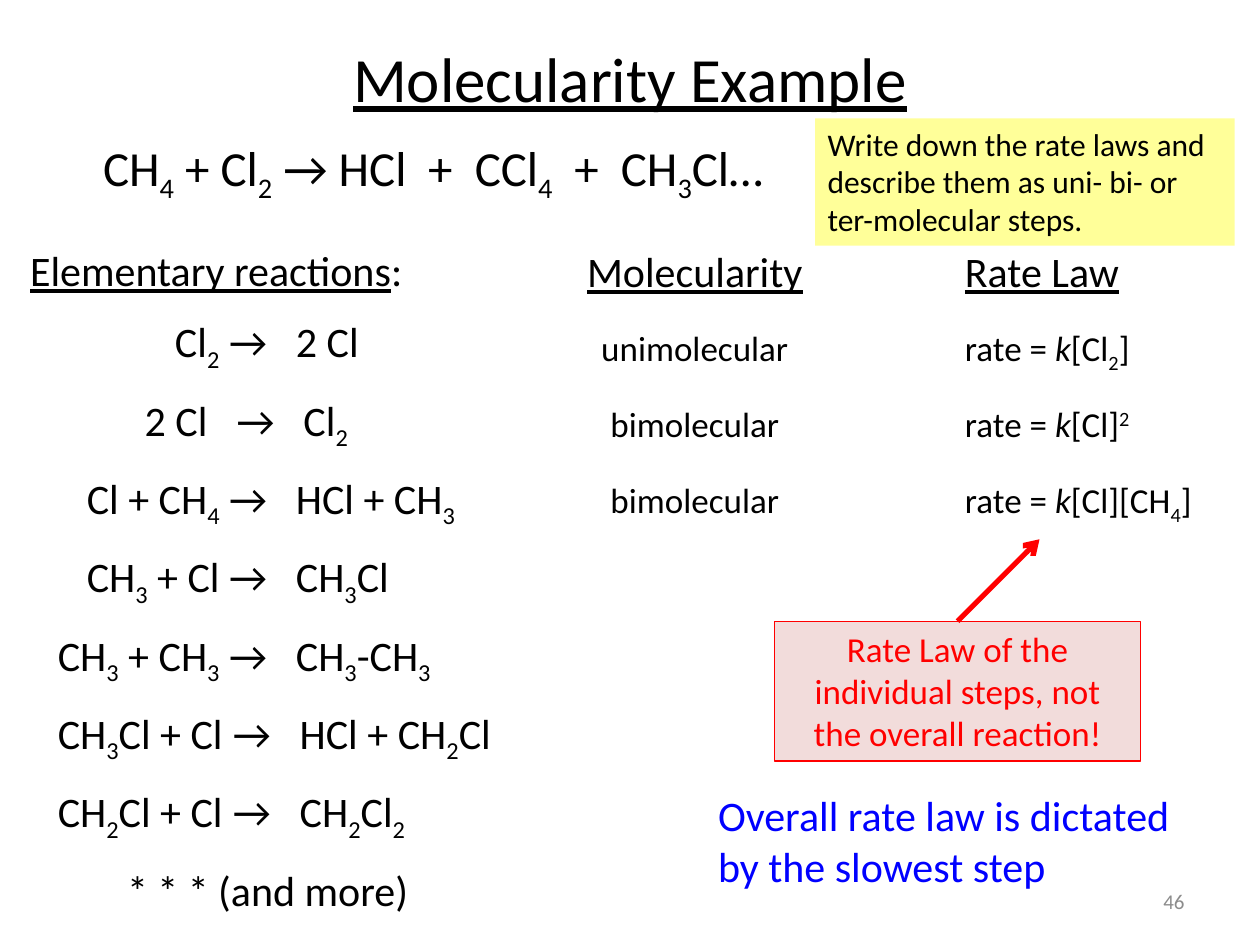
"""Build the molecularity example slide with its reactions, rate laws and callouts."""
from dataclasses import dataclass

import pptx
import pptx.dml.color
import pptx.enum.shapes
import pptx.enum.text
import pptx.oxml.ns
import pptx.util
from lxml import etree

ALIGN = pptx.enum.text.PP_ALIGN
ANCHOR = pptx.enum.text.MSO_ANCHOR
COLUMNS, ROWS = 100, 75
SHIFTS = {"_": "-25000", "^": "30000"}


@dataclass(frozen=True)
class Theme:
    """Colours, font and type sizes of the slide."""
    font: str = "Calibri"
    ink: str = "000000"
    alert: str = "FF0000"
    remark: str = "0000FF"
    muted: str = "8C8C8C"
    note_fill: str = "FFFF99"
    alert_fill: str = "F2DCDB"
    title: int = 36
    equation: int = 28
    heading: int = 24
    label: int = 20
    note: int = 18
    footer: int = 12


THEME = Theme()
PRODUCT_GAP = 0.53
REACTIONS = [
    (1.15, 1.58, "Cl{_2}", "2 Cl"),
    (0.91, 1.64, "2 Cl", "Cl{_2}"),
    (0.45, 1.58, "Cl + CH{_4}", "HCl + CH{_3}"),
    (0.45, 1.58, "CH{_3} + Cl", "CH{_3}Cl"),
    (0.22, 1.58, "CH{_3} + CH{_3}", "CH{_3}-CH{_3}"),
    (0.22, 1.61, "CH{_3}Cl + Cl", "HCl + CH{_2}Cl"),
    (0.22, 1.61, "CH{_2}Cl + Cl", "CH{_2}Cl{_2}"),
]
STEPS = [
    ("unimolecular", "rate = {/k}[Cl{_2}]"),
    ("bimolecular", "rate = {/k}[Cl]{^2}"),
    ("bimolecular", "rate = {/k}[Cl][CH{_4}]"),
]


def color(value):
    """Return a colour object for a hex value."""
    return pptx.dml.color.RGBColor.from_string(value)


def grid(deck, *cells):
    """Turn column and row counts, given in turn, into slide lengths."""
    units = (deck.slide_width / COLUMNS, deck.slide_height / ROWS)
    return [round(count * units[index % 2]) for index, count in enumerate(cells)]


def add_span(para, text, size, ink, mark=""):
    """Add one run, styled by its mark: _ sub, ^ super, / italic, u underline."""
    span = para.add_run()
    span.text = text
    span.font.name = THEME.font
    span.font.size = pptx.util.Pt(size)
    span.font.color.rgb = color(ink)
    if mark == "/":
        span.font.italic = True
    elif mark == "u":
        span.font.underline = True
    elif mark in SHIFTS:
        span.font._element.set("baseline", SHIFTS[mark])


def write(para, markup, size, ink=THEME.ink, align=ALIGN.LEFT, before=0, stops=()):
    """Write marked-up text such as CH{_4} into a paragraph with tab stops."""
    if stops:
        set_tabs(para, stops)
    para.alignment = align
    para.space_before = pptx.util.Pt(before)
    for part in markup.split("{"):
        styled, _, plain = part.rpartition("}")
        if styled:
            add_span(para, styled[1:], size, ink, styled[0])
        if plain:
            add_span(para, plain, size, ink)


def set_tabs(para, stops):
    """Set left tab stops, given in inches."""
    props = para._p.get_or_add_pPr()
    tabs = etree.SubElement(props, pptx.oxml.ns.qn("a:tabLst"))
    for stop in stops:
        etree.SubElement(tabs, pptx.oxml.ns.qn("a:tab"),
                         pos=str(int(pptx.util.Inches(stop))), algn="l")


def add_title(page, area, markup):
    """Move the title placeholder and write into it."""
    title = page.shapes.title
    title.left, title.top, title.width, title.height = area
    write(title.text_frame.paragraphs[0], markup, THEME.title, align=ALIGN.CENTER)


def add_label(page, area, markup, size, **style):
    """Add a wrapping text box and return its text frame."""
    frame = page.shapes.add_textbox(*area).text_frame
    frame.word_wrap = True
    write(frame.paragraphs[0], markup, size, **style)
    return frame


def add_panel(page, area, markup, size, fill, edge=None, **style):
    """Add a filled rectangle with text, outlined when an edge colour is given."""
    panel = page.shapes.add_shape(pptx.enum.shapes.MSO_SHAPE.RECTANGLE, *area)
    panel.shadow.inherit = False
    panel.fill.solid()
    panel.fill.fore_color.rgb = color(fill)
    if edge:
        panel.line.color.rgb = color(edge)
        panel.line.width = pptx.util.Pt(0.75)
    else:
        panel.line.fill.background()
    panel.text_frame.word_wrap = True
    panel.text_frame.vertical_anchor = ANCHOR.TOP
    write(panel.text_frame.paragraphs[0], markup, size, **style)
    return panel


def add_arrow(page, source, tip, ink):
    """Draw an arrow from the top of a panel to a point."""
    start = (source.left + source.width // 2, source.top)
    arrow = page.shapes.add_connector(
        pptx.enum.shapes.MSO_CONNECTOR.STRAIGHT, *start, *tip)
    arrow.begin_connect(source, 0)
    arrow.line.color.rgb = color(ink)
    arrow.line.width = pptx.util.Pt(3)
    etree.SubElement(arrow.line._get_or_add_ln(),
                     pptx.oxml.ns.qn("a:tailEnd"), type="arrow")
    etree.SubElement(arrow._element.spPr, pptx.oxml.ns.qn("a:effectLst"))


def add_reactions(page, area):
    """List the elementary reactions, placing arrows and products by tabs."""
    frame = add_label(page, area, "{uElementary reactions}:", THEME.heading)
    lines = [((start, arrow, arrow + PRODUCT_GAP), f"\t{left}\t→\t{right}")
             for start, arrow, left, right in REACTIONS]
    lines.append(((0.77,), "\t* * * (and more)"))
    for stops, markup in lines:
        write(frame.add_paragraph(), markup, THEME.heading,
              before=THEME.heading / 2, stops=stops)


def add_steps(deck, page):
    """Set the molecularity and rate law columns under their headings."""
    columns = [(45.5, 19.3, "Molecularity", ALIGN.CENTER),
               (75.6, 23, "Rate Law", ALIGN.LEFT)]
    for index, (left, width, heading, align) in enumerate(columns):
        add_label(page, grid(deck, left, 19, width, 5), f"{{u{heading}}}",
                  THEME.heading, align=align)
        for row, step in enumerate(STEPS):
            add_label(page, grid(deck, left, 25.4 + 6.05 * row, width, 4.4),
                      step[index], THEME.label, align=align)


def main():
    """Assemble and save the slide."""
    deck = pptx.Presentation()
    deck.slide_width, deck.slide_height = pptx.util.Inches(10), pptx.util.Inches(7.5)
    page = deck.slides.add_slide(deck.slide_layouts.get_by_name("Title Only"))
    add_title(page, grid(deck, 5, -0.1, 90, 12.5), "{uMolecularity Example}")
    add_reactions(page, grid(deck, 1.4, 18.9, 50.8, 53.5))
    add_panel(page, grid(deck, 64.7, 9.4, 33.3, 10.1),
              "Write down the rate laws and describe them as uni- bi- or ter-molecular steps.",
              THEME.note, THEME.note_fill)
    add_label(page, grid(deck, 0.5, 10.4, 67.9, 5.7),
              "\tCH{_4} + Cl{_2} → HCl\t+\tCCl{_4}\t+\tCH{_3}Cl…",
              THEME.equation, stops=(0.67, 3.25, 3.62, 4.41, 4.78))
    add_steps(deck, page)
    callout = add_panel(page, grid(deck, 61.5, 49.3, 29, 11.1),
                        "Rate Law of the individual steps, not the overall reaction!",
                        THEME.label, THEME.alert_fill, edge=THEME.alert,
                        ink=THEME.alert, align=ALIGN.CENTER)
    add_arrow(page, callout, grid(deck, 82.5, 42.8), THEME.alert)
    add_label(page, grid(deck, 56, 62.2, 40.8, 9.1),
              "Overall rate law is dictated by the slowest step",
              THEME.heading, ink=THEME.remark)
    number = add_label(page, grid(deck, 71.7, 69.5, 23.3, 4), "46", THEME.footer,
                       ink=THEME.muted, align=ALIGN.RIGHT)
    number.vertical_anchor = ANCHOR.MIDDLE
    deck.save("out.pptx")


if __name__ == "__main__":
    main()
